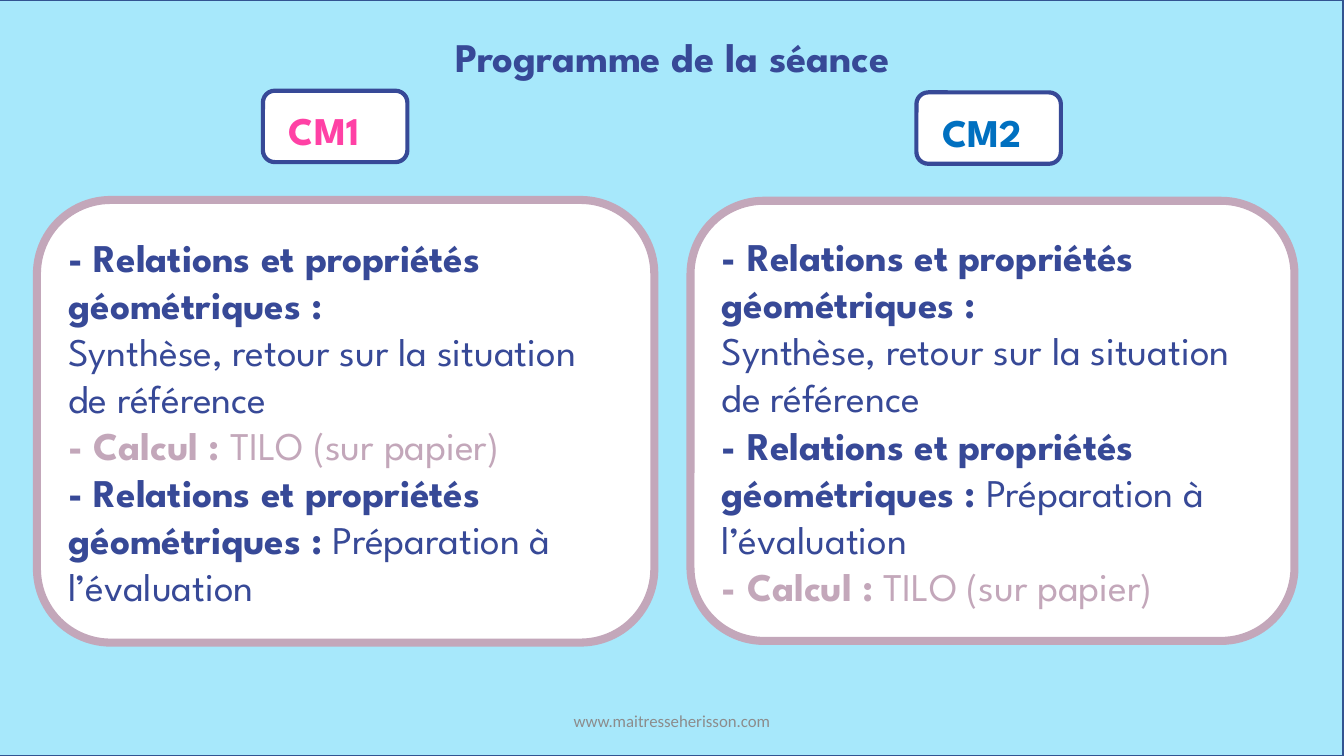
from dataclasses import dataclass

from pptx import Presentation
from pptx.dml.color import RGBColor
from pptx.enum.shapes import MSO_SHAPE as Preset
from pptx.enum.text import MSO_ANCHOR as Anchor, PP_ALIGN as Align
from pptx.shapes.autoshape import Shape
from pptx.shapes.shapetree import GroupShapes, SlideShapes
from pptx.util import Inches, Pt

WIDTH, HEIGHT = Inches(13.33), Inches(7.5)
COLUMN, ROW = WIDTH / 160, HEIGHT / 90

COLORS = {
    "sky": "A7E8FB",
    "border": "325491",
    "navy": "374997",
    "mauve": "C3A7BA",
    "pink": "FF41A5",
    "blue": "0070C0",
    "grey": "8C8C8C",
    "white": "FFFFFF",
}
DISPLAY_FONT = "League Spartan"


@dataclass(frozen=True)
class Box:
    column: float
    row: float
    columns: float
    rows: float

    def lengths(self) -> tuple[int, int, int, int]:
        return (round(self.column * COLUMN), round(self.row * ROW),
                round(self.columns * COLUMN), round(self.rows * ROW))


@dataclass(frozen=True)
class Span:
    text: str
    color: str = "navy"
    bold: bool = True
    size: float = 28
    font: str = DISPLAY_FONT


Paragraphs = list[list[Span]]
Shapes = SlideShapes | GroupShapes


@dataclass(frozen=True)
class Level:
    name: str
    color: str
    badge: Box
    panel: Box
    program: Paragraphs


SYNTHESIS: Paragraphs = [
    [Span("- Relations et propriétés géométriques :")],
    [Span("Synthèse, retour sur la situation de référence", bold=False)],
]
CALCULATION: Paragraphs = [
    [Span("- Calcul : ", "mauve"), Span("TILO (sur papier)", "mauve", False)],
]
PREPARATION: Paragraphs = [
    [Span("- Relations et propriétés géométriques : "),
     Span("Préparation à l’évaluation", bold=False)],
]

LEVELS = [
    Level("CM1", "pink", Box(31.3, 10.8, 17.2, 8.5), Box(4.4, 23.8, 73.5, 52.7),
          SYNTHESIS + CALCULATION + PREPARATION),
    Level("CM2", "blue", Box(109.1, 11, 17.2, 8.5), Box(82.2, 23.9, 71.9, 52.4),
          SYNTHESIS + PREPARATION + CALCULATION),
]


def rgb(name: str) -> RGBColor:
    return RGBColor.from_string(COLORS[name])


def write(shape: Shape, paragraphs: Paragraphs, align: Align = Align.LEFT,
          anchor: Anchor = Anchor.TOP) -> None:
    frame = shape.text_frame
    frame.word_wrap = True
    frame.vertical_anchor = anchor
    frame.text = "\n".join("" for _ in paragraphs)
    for paragraph, spans in zip(frame.paragraphs, paragraphs):
        paragraph.alignment = align
        for span in spans:
            run = paragraph.add_run()
            run.text = span.text
            run.font.name = span.font
            run.font.size = Pt(span.size)
            run.font.bold = span.bold
            run.font.color.rgb = rgb(span.color)


def add_panel(shapes: Shapes, preset: Preset, box: Box, fill: str,
              line: str, line_width: float) -> Shape:
    shape = shapes.add_shape(preset, *box.lengths())
    shape.shadow.inherit = False
    shape.fill.solid()
    shape.fill.fore_color.rgb = rgb(fill)
    shape.line.color.rgb = rgb(line)
    shape.line.width = Pt(line_width)
    return shape


def add_text(shapes: Shapes, box: Box, span: Span, align: Align = Align.LEFT,
             anchor: Anchor = Anchor.TOP) -> None:
    write(shapes.add_textbox(*box.lengths()), [[span]], align, anchor)


def add_level(shapes: SlideShapes, level: Level) -> None:
    panel = add_panel(shapes, Preset.ROUNDED_RECTANGLE, level.panel,
                      "white", "mauve", 5.75)
    write(panel, level.program, anchor=Anchor.MIDDLE)
    badge = shapes.add_group_shape().shapes
    add_panel(badge, Preset.ROUNDED_RECTANGLE, level.badge, "white", "navy", 3)
    label = Box(level.badge.column + 1.9, level.badge.row + 1.3, 13.2, 6.9)
    add_text(badge, label, Span(level.name, level.color))


def main() -> None:
    presentation = Presentation()
    presentation.slide_width, presentation.slide_height = WIDTH, HEIGHT
    slide = presentation.slides.add_slide(presentation.slide_layouts[6])
    shapes = slide.shapes
    add_panel(shapes, Preset.RECTANGLE, Box(-0.1, 0, 160, 90), "sky", "border", 1)
    for level in LEVELS:
        add_level(shapes, level)
    add_text(shapes, Box(0.1, 3.2, 160, 7.1),
             Span("Programme de la séance", size=29), Align.CENTER)
    add_text(shapes, Box(53, 83.4, 54, 4.8),
             Span("www.maitresseherisson.com", "grey", False, 12, "Calibri"),
             Align.CENTER, Anchor.MIDDLE)
    presentation.save("out.pptx")


if __name__ == "__main__":
    main()
